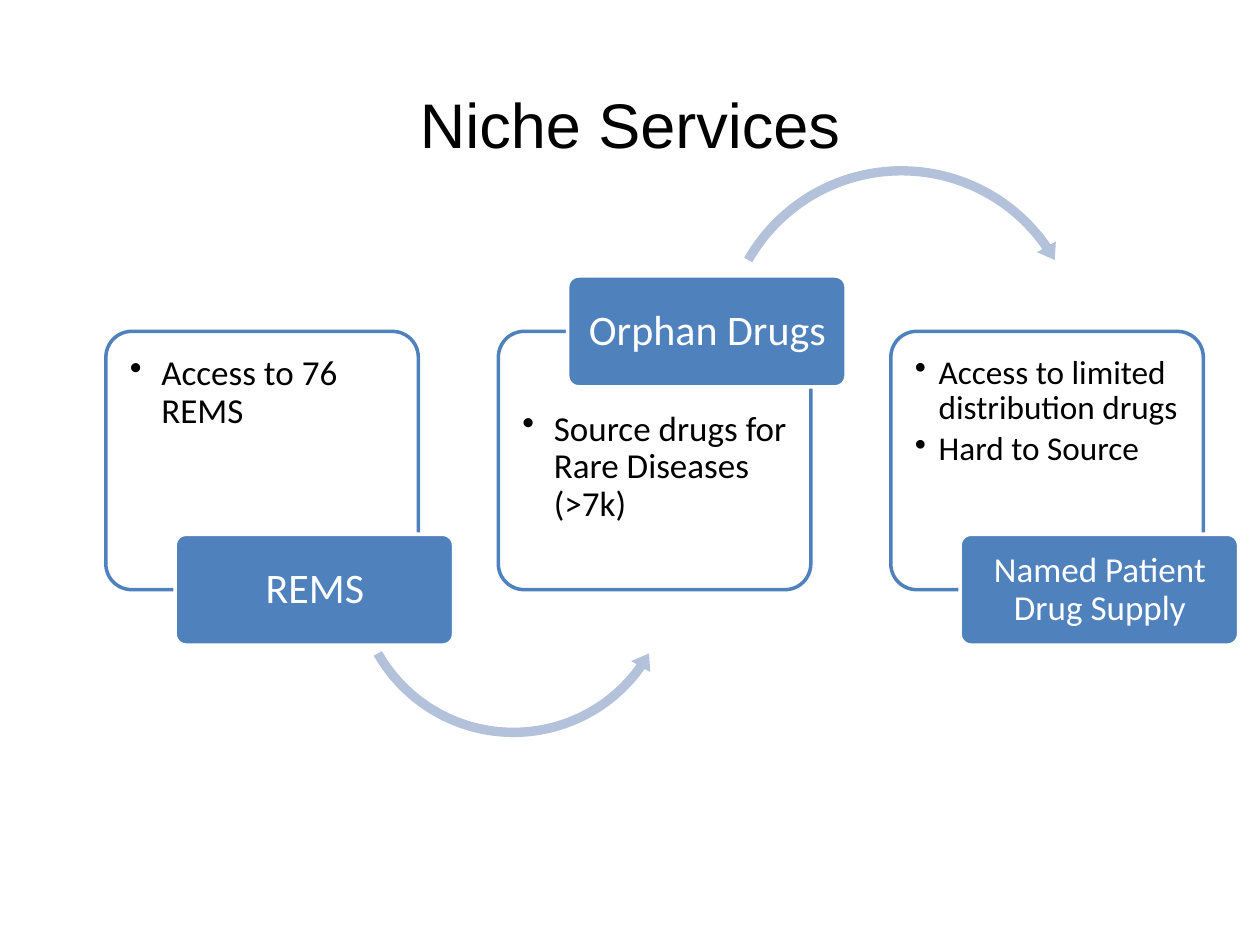
from dataclasses import dataclass

from lxml.etree import SubElement
from pptx import Presentation
from pptx.dml.color import RGBColor
from pptx.enum.shapes import MSO_SHAPE
from pptx.enum.text import MSO_ANCHOR, PP_ALIGN
from pptx.oxml.ns import qn
from pptx.util import Inches, Pt


@dataclass(frozen=True)
class Theme:
    blue: RGBColor = RGBColor.from_string("4F81BD")
    pale_blue: RGBColor = RGBColor.from_string("B3C1DB")
    white: RGBColor = RGBColor.from_string("FFFFFF")
    black: RGBColor = RGBColor.from_string("000000")
    title_font: str = "Arial"
    body_font: str = "Calibri"
    title_size: int = 36
    label_size: int = 24
    body_size: int = 20
    small_size: int = 19
    outline: int = 2


theme = Theme()
prs = Presentation()
prs.slide_width, prs.slide_height = Inches(10), Inches(7.5)
slide = prs.slides.add_slide(prs.slide_layouts[6])


def add_preset(preset, box, fill, line, adjustments):
    shape = slide.shapes.add_shape(preset, *map(Inches, box))
    shape.shadow.inherit = False
    shape.fill.solid()
    shape.fill.fore_color.rgb = fill
    if line is None:
        shape.line.fill.background()
    else:
        shape.line.color.rgb = line
        shape.line.width = Pt(theme.outline)
    for index, value in enumerate(adjustments):
        shape.adjustments[index] = value


def add_text(box, lines, size, color, font=theme.body_font, inset=(0, 0), spacing=0.9, indent=None):
    """Centred text, or a top-aligned bullet list when an indent is given."""
    frame = slide.shapes.add_textbox(*map(Inches, box)).text_frame
    frame.word_wrap = True
    frame.margin_left = frame.margin_right = Inches(inset[0])
    frame.margin_top = frame.margin_bottom = Inches(inset[1])
    frame.vertical_anchor = MSO_ANCHOR.TOP if indent else MSO_ANCHOR.MIDDLE
    for index, line in enumerate(lines):
        paragraph = frame.paragraphs[0] if index == 0 else frame.add_paragraph()
        paragraph.line_spacing = spacing
        if indent:
            paragraph.alignment = PP_ALIGN.LEFT
            paragraph.space_after = Pt(size * 0.15)
            properties = paragraph._p.get_or_add_pPr()
            properties.set("marL", str(Inches(indent)))
            properties.set("indent", str(-Inches(indent)))
            SubElement(properties, qn("a:buChar")).set("char", "•")
        else:
            paragraph.alignment = PP_ALIGN.CENTER
        run = paragraph.add_run()
        run.text = line
        run.font.name = font
        run.font.size = Pt(size)
        run.font.color.rgb = color


# Title
add_text((0.84, 0.67, 8.32, 0.61), ["Niche Services"], theme.title_size, theme.black,
         font=theme.title_font, spacing=1.0)

# Services: label, label size, details, detail size, indent, label on top
services = [
    ("REMS", theme.label_size, ["Access to 76 REMS"], theme.body_size, 0.25, False),
    ("Orphan Drugs", theme.label_size, ["Source drugs for Rare Diseases (>7k)"],
     theme.body_size, 0.25, True),
    ("Named Patient Drug Supply", theme.body_size,
     ["Access to limited distribution drugs", "Hard to Source"], theme.small_size, 0.19, False),
]

# Arrows leading from one service to the next
arrows = [
    (MSO_SHAPE.LEFT_CIRCULAR_ARROW, (2.75, 3.25, 2.65, 2.65),
     (0.028, 3.433, 21.188, 90.245, 0.033)),
    (MSO_SHAPE.CIRCULAR_ARROW, (5.67, 1.27, 2.97, 2.97),
     (0.025, 3.044, 195.201, 125.755, 0.029)),
]

panel_left, panel_top, panel_step = 0.84, 2.63, 3.115
panel_width, panel_height = 2.48, 2.05
label_width, label_height, label_shift = 2.21, 0.88, 0.55

for column, (label, label_size, details, detail_size, indent, on_top) in enumerate(services):
    left = panel_left + column * panel_step

    # Outlined panel with its details
    add_preset(MSO_SHAPE.ROUNDED_RECTANGLE, (left, panel_top, panel_width, panel_height),
               theme.white, theme.blue, [0.1])
    details_top = panel_top + (0.49 if on_top else 0.05)
    add_text((left + 0.05, details_top, 2.39, 1.52), details, detail_size, theme.black,
             inset=(0.14, 0.14), indent=indent)

    # Arrow to the next service
    if column < len(arrows):
        preset, box, adjustments = arrows[column]
        add_preset(preset, box, theme.pale_blue, None, adjustments)

    # Label straddling the panel's top or bottom edge
    label_left = left + label_shift
    edge = panel_top if on_top else panel_top + panel_height
    label_top = edge - label_height / 2
    add_preset(MSO_SHAPE.ROUNDED_RECTANGLE, (label_left, label_top, label_width, label_height),
               theme.blue, theme.white, [0.1])
    add_text((label_left + 0.03, label_top + 0.03, 2.16, 0.83), [label], label_size,
             theme.white, inset=(0.05, 0.03))

prs.save("out.pptx")
